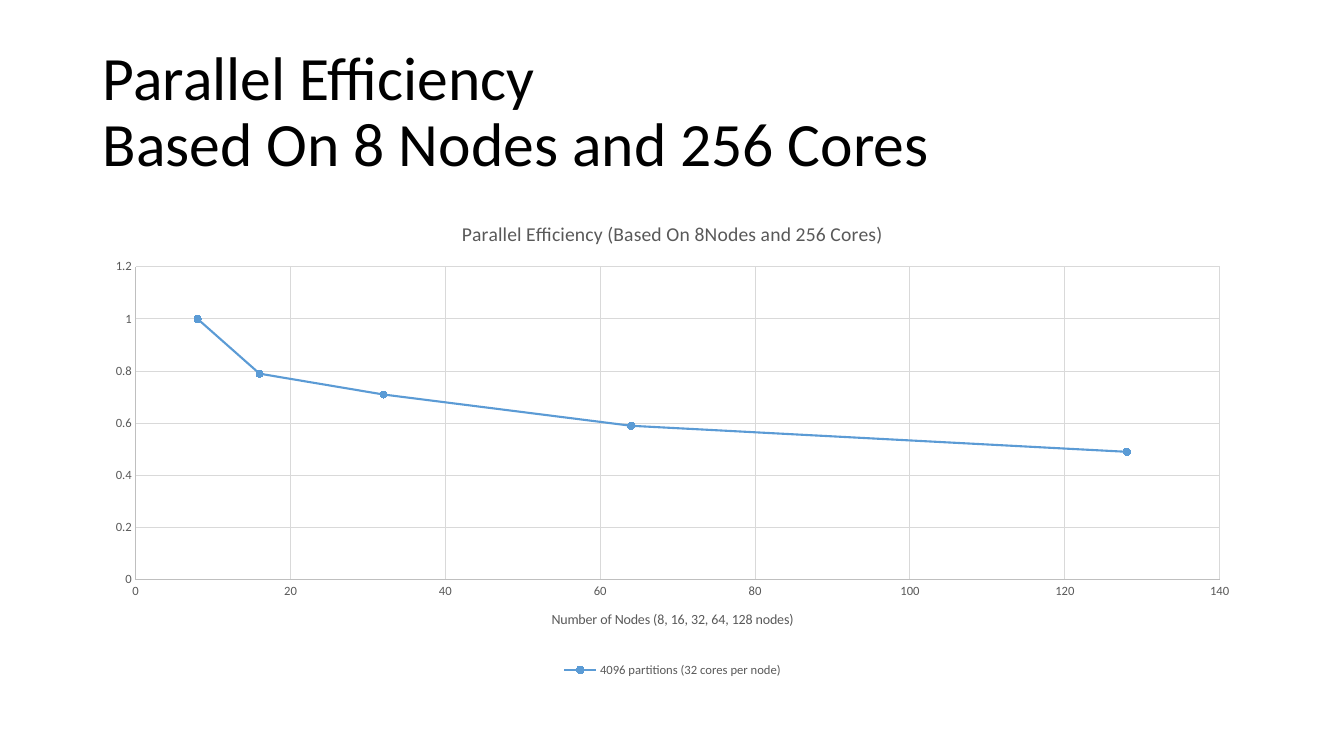
from lxml import etree
from pptx import Presentation
from pptx.chart.data import XyChartData
from pptx.dml.color import RGBColor
from pptx.enum.chart import XL_CHART_TYPE, XL_LEGEND_POSITION, XL_MARKER_STYLE, XL_TICK_MARK
from pptx.enum.text import MSO_ANCHOR, MSO_AUTO_SIZE, PP_ALIGN
from pptx.oxml.ns import qn
from pptx.util import Inches, Pt

SCATTER_LINES = XL_CHART_TYPE.XY_SCATTER_LINES
LEGEND_BOTTOM = XL_LEGEND_POSITION.BOTTOM
CIRCLE = XL_MARKER_STYLE.CIRCLE
NO_TICK = XL_TICK_MARK.NONE
MIDDLE = MSO_ANCHOR.MIDDLE
NO_AUTOFIT = MSO_AUTO_SIZE.NONE
LEFT = PP_ALIGN.LEFT

# Content
TITLE = "Parallel Efficiency\vBased On 8 Nodes and 256 Cores"
CHART_TITLE = "Parallel Efficiency (Based On 8Nodes and 256 Cores)"
NODES_TITLE = "Number of Nodes (8, 16, 32, 64, 128 nodes)"
SERIES_NAME = "4096 partitions (32 cores per node)"
EFFICIENCY = {8: 1, 16: 0.79, 32: 0.71, 64: 0.59, 128: 0.49}
NODES_SCALE = (0, 140, 20)
EFFICIENCY_SCALE = (0, 1.2, 0.2)

# Style and geometry
FONT = "Calibri"
BLACK, GRAY, AXIS_GRAY, GRID_GRAY, BLUE = "000000", "595959", "BFBFBF", "D9D9D9", "5B9BD5"
SLIDE_WIDTH, SLIDE_HEIGHT = Inches(13.33), Inches(7.5)
MARGIN = Inches(0.92)
CONTENT_WIDTH = Inches(11.5)
TITLE_TOP, TITLE_HEIGHT = Inches(0.4), Inches(1.45)
CHART_TOP, CHART_HEIGHT = Inches(2), Inches(4.76)
PLOT_SHARES = {"x": 0.037, "y": 0.136, "w": 0.935, "h": 0.652}


def color(hex_text):
    return RGBColor.from_string(hex_text)


def style_font(font, size, hex_text):
    font.name = FONT
    font.size = Pt(size)
    font.bold = False
    font.color.rgb = color(hex_text)


def style_line(line, hex_text, width):
    line.color.rgb = color(hex_text)
    line.width = Pt(width)


def set_chart_text(titled, text, size):
    frame = titled.text_frame
    frame.text = text
    style_font(frame.paragraphs[0].runs[0].font, size, GRAY)


def style_axis(axis, scale):
    axis.minimum_scale, axis.maximum_scale, axis.major_unit = scale
    axis.major_tick_mark = axis.minor_tick_mark = NO_TICK
    axis.has_major_gridlines = True
    style_line(axis.major_gridlines.format.line, GRID_GRAY, 0.75)
    style_line(axis.format.line, AXIS_GRAY, 0.75)
    style_font(axis.tick_labels.font, 9, GRAY)
    axis.tick_labels.number_format = "General"
    axis.tick_labels.number_format_is_linked = False


def place_plot(chart, shares):
    plot_area = chart.element.find(".//" + qn("c:plotArea"))
    for layout in plot_area.findall(qn("c:layout")):
        plot_area.remove(layout)
    layout = etree.Element(qn("c:layout"))
    plot_area.insert(0, layout)
    manual = etree.SubElement(layout, qn("c:manualLayout"))
    settings = {"layoutTarget": "inner", "xMode": "edge", "yMode": "edge", **shares}
    for tag, value in settings.items():
        etree.SubElement(manual, qn("c:" + tag)).set("val", str(value))


presentation = Presentation()
presentation.slide_width, presentation.slide_height = SLIDE_WIDTH, SLIDE_HEIGHT
slide = presentation.slides.add_slide(presentation.slide_layouts[5])

# Title
title = slide.shapes.title
title.left, title.top = MARGIN, TITLE_TOP
title.width, title.height = CONTENT_WIDTH, TITLE_HEIGHT
title.text_frame.text = TITLE
title.text_frame.vertical_anchor = MIDDLE
title.text_frame.auto_size = NO_AUTOFIT
paragraph = title.text_frame.paragraphs[0]
paragraph.alignment = LEFT
paragraph.line_spacing = 0.9
for run in paragraph.runs:
    style_font(run.font, 44, BLACK)

# Chart
chart_data = XyChartData()
points = chart_data.add_series(SERIES_NAME)
for nodes, efficiency in EFFICIENCY.items():
    points.add_data_point(nodes, efficiency)
chart = slide.shapes.add_chart(
    SCATTER_LINES, MARGIN, CHART_TOP, CONTENT_WIDTH, CHART_HEIGHT, chart_data
).chart
style_font(chart.font, 10, BLACK)
chart.has_title = True
set_chart_text(chart.chart_title, CHART_TITLE, 14)
chart.chart_title.include_in_layout = False
chart.plots[0].vary_by_categories = False
place_plot(chart, PLOT_SHARES)

# Axes and legend
style_axis(chart.category_axis, NODES_SCALE)
style_axis(chart.value_axis, EFFICIENCY_SCALE)
set_chart_text(chart.category_axis.axis_title, NODES_TITLE, 10)
chart.has_legend = True
chart.legend.position = LEGEND_BOTTOM
chart.legend.include_in_layout = False
style_font(chart.legend.font, 9, GRAY)

# Efficiency line
series = chart.plots[0].series[0]
series.smooth = False
style_line(series.format.line, BLUE, 1.5)
series.marker.style = CIRCLE
series.marker.size = 5
series.marker.format.fill.solid()
series.marker.format.fill.fore_color.rgb = color(BLUE)
style_line(series.marker.format.line, BLUE, 0.75)

presentation.save("out.pptx")
